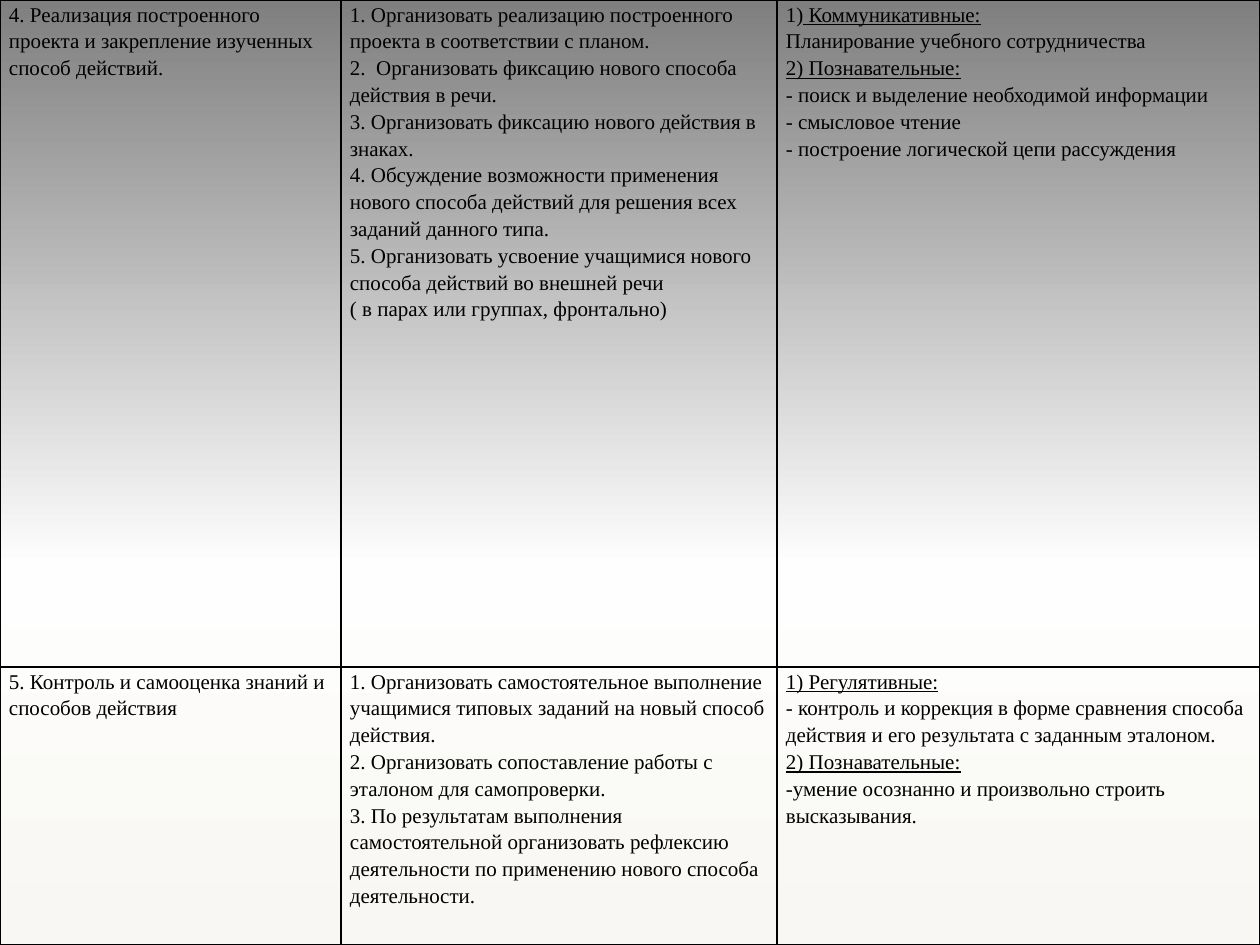
from dataclasses import dataclass

from lxml.etree import SubElement
from pptx import Presentation
from pptx.dml.color import RGBColor as Color
from pptx.enum.text import MSO_ANCHOR as Anchor
from pptx.oxml.ns import qn
from pptx.util import Pt


@dataclass(frozen=True)
class Theme:
    font: str = "Times New Roman"
    text_size: int = 12
    line_spacing: float = 1.15
    text: str = "000000"
    border: str = "000000"
    border_width: int = 1
    gradient: tuple = ((0, "F8F7F3"), (40, "FEFEFE"), (100, "7F7F7F"))


THEME = Theme()
PX_PER_INCH = 126
SLIDE_SIZE = (1260, 945)
COLUMN_WIDTHS = (341, 436, 483)
ROW_HEIGHTS = (667, 278)
CELL_INSET = 9
UNDERLINE = "_"

LESSON_STAGES = [
    [
        ["4. Реализация построенного проекта и закрепление изученных способ действий."],
        [
            "1. Организовать реализацию построенного проекта в соответствии с планом.",
            "2.  Организовать фиксацию нового способа действия в речи.",
            "3. Организовать фиксацию нового действия в знаках.",
            "4. Обсуждение возможности применения нового способа действий для решения всех заданий данного типа.",
            "5. Организовать усвоение учащимися нового способа действий во внешней речи",
            "( в парах или группах, фронтально)",
        ],
        [
            "1)_ Коммуникативные:_",
            "Планирование учебного сотрудничества",
            "_2) Познавательные:_",
            "- поиск и выделение необходимой информации",
            "- смысловое чтение",
            "- построение логической цепи рассуждения",
        ],
    ],
    [
        ["5. Контроль и самооценка знаний и способов действия"],
        [
            "1. Организовать самостоятельное выполнение учащимися типовых заданий на новый способ действия.",
            "2. Организовать сопоставление работы с эталоном для самопроверки.",
            "3. По результатам выполнения самостоятельной организовать рефлексию деятельности по применению нового способа деятельности.",
        ],
        [
            "_1) Регулятивные:_",
            "- контроль и коррекция в форме сравнения способа действия и его результата с заданным эталоном.",
            "_2) Познавательные:_",
            "-умение осознанно и произвольно строить высказывания.",
        ],
    ],
]


def px(length):
    return round(length * 914400 / PX_PER_INCH)


def set_gradient_background(slide, stops, angle):
    fill = slide.background.fill
    fill.gradient()
    fill.gradient_angle = angle
    stop_list = next(slide.element.iter(qn("a:gsLst")))
    for stop in list(stop_list):
        stop_list.remove(stop)
    for position, color in stops:
        stop = SubElement(stop_list, qn("a:gs"), pos=str(position * 1000))
        SubElement(stop, qn("a:srgbClr"), val=color)


def write_text(paragraph, text, *, size, font, color, line_spacing):
    paragraph.line_spacing = line_spacing
    for index, part in enumerate(text.split(UNDERLINE)):
        if part:
            run = paragraph.add_run()
            run.text = part
            run.font.size = Pt(size)
            run.font.name = font
            run.font.bold = False
            run.font.underline = index % 2 == 1
            run.font.color.rgb = Color.from_string(color)


def set_borders(cell, *, color, width):
    properties = cell._tc.get_or_add_tcPr()
    for side in ("lnL", "lnR", "lnT", "lnB"):
        line = SubElement(properties, qn(f"a:{side}"), w=str(Pt(width)))
        fill = SubElement(line, qn("a:solidFill"))
        SubElement(fill, qn("a:srgbClr"), val=color)


def fill_cell(cell, lines):
    cell.margin_left = cell.margin_right = px(CELL_INSET)
    cell.margin_top = cell.margin_bottom = 0
    cell.vertical_anchor = Anchor.TOP
    set_borders(cell, color=THEME.border, width=THEME.border_width)
    cell.fill.background()
    frame = cell.text_frame
    for index, line in enumerate(lines):
        paragraph = frame.add_paragraph() if index else frame.paragraphs[0]
        write_text(paragraph, line, size=THEME.text_size, font=THEME.font,
                   color=THEME.text, line_spacing=THEME.line_spacing)


def add_stage_table(slide, stages):
    width, height = map(px, SLIDE_SIZE)
    table = slide.shapes.add_table(
        len(ROW_HEIGHTS), len(COLUMN_WIDTHS), 0, 0, width, height).table
    table.first_row = table.horz_banding = False
    for column, column_width in zip(table.columns, COLUMN_WIDTHS):
        column.width = px(column_width)
    for row, row_height, stage in zip(table.rows, ROW_HEIGHTS, stages):
        row.height = px(row_height)
        for cell, lines in zip(row.cells, stage):
            fill_cell(cell, lines)


def main():
    presentation = Presentation()
    presentation.slide_width, presentation.slide_height = map(px, SLIDE_SIZE)
    slide = presentation.slides.add_slide(presentation.slide_layouts[6])
    set_gradient_background(slide, THEME.gradient, angle=90)
    add_stage_table(slide, LESSON_STAGES)
    presentation.save("out.pptx")


if __name__ == "__main__":
    main()
